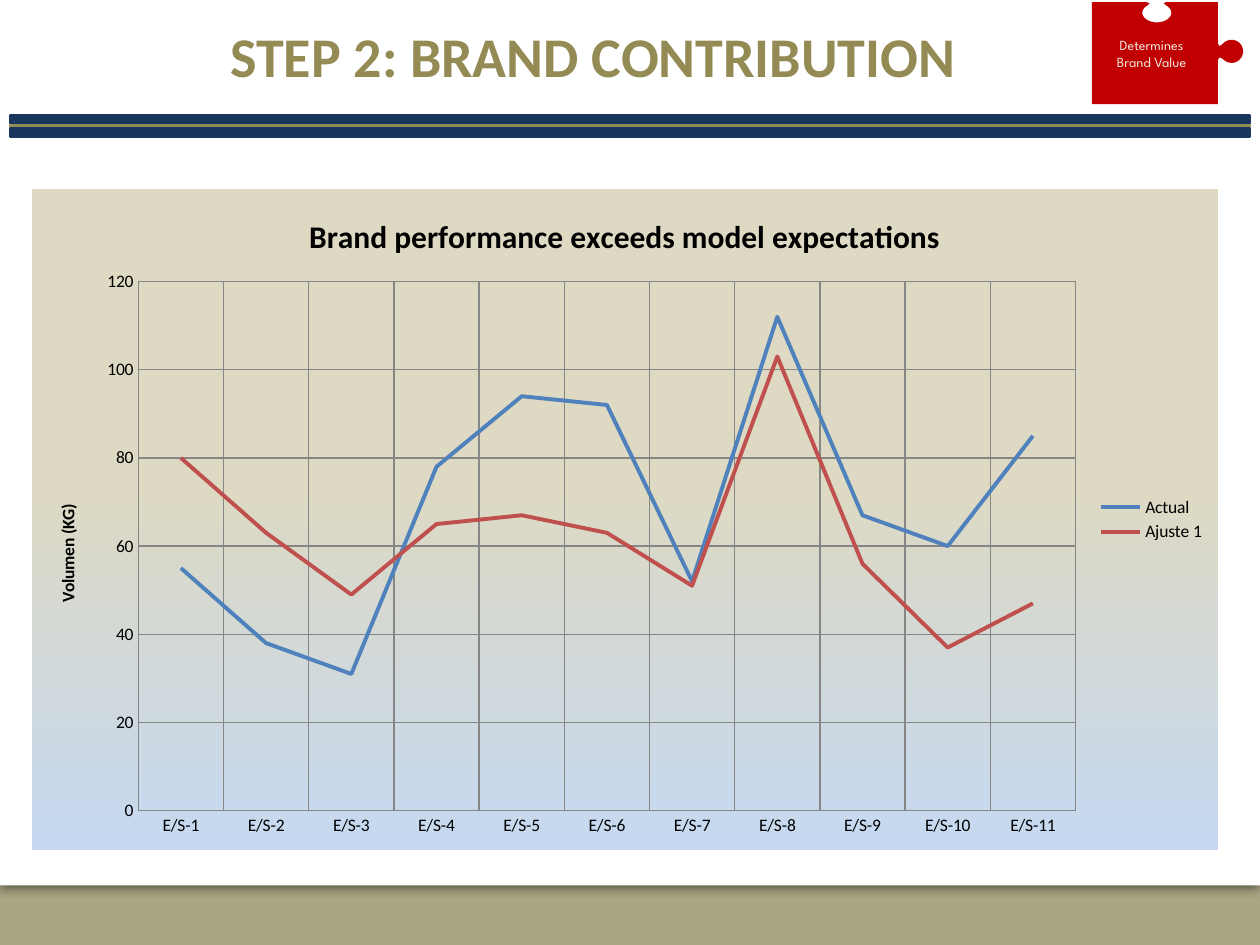
from dataclasses import dataclass
from math import cos, radians, sin

from lxml.etree import fromstring
from pptx import Presentation
from pptx.chart.data import CategoryChartData
from pptx.dml.color import RGBColor
from pptx.enum.chart import XL_CHART_TYPE, XL_LEGEND_POSITION, XL_TICK_MARK
from pptx.enum.shapes import MSO_SHAPE
from pptx.enum.text import MSO_ANCHOR, MSO_AUTO_SIZE, PP_ALIGN
from pptx.oxml.ns import nsdecls
from pptx.util import Pt


@dataclass(frozen=True)
class Theme:
    """Colours, fonts and type sizes of the slide."""
    backdrop: str = "A9A684"
    paper: str = "FFFFFF"
    navy: str = "17375E"
    olive: str = "948A54"
    red: str = "C00000"
    cream: str = "EEECE1"
    ink: str = "000000"
    grid: str = "868686"
    chart_top: str = "DDD9C3"
    chart_bottom: str = "C6D9F1"
    series: tuple = ("4F81BD", "C0504D")
    font: str = "Calibri"
    badge_font: str = "League Spartan"
    title_size: int = 32
    chart_title_size: int = 18
    chart_size: int = 10
    badge_size: int = 8


THEME = Theme()
STATIONS = [f"E/S-{number}" for number in range(1, 12)]
VOLUMES = {
    "Actual": (55, 38, 31, 78, 94, 92, 52, 112, 67, 60, 85),
    "Ajuste 1": (80, 63, 49, 65, 67, 63, 51, 103, 56, 37, 47),
}


def rgb(code):
    """Turn a hex code into a colour."""
    return RGBColor.from_string(code)


def style_font(font, size, color, bold=False, name=THEME.font):
    """Set the face, size, colour and weight of a font."""
    font.name, font.size, font.bold = name, Pt(size), bold
    font.color.rgb = rgb(color)


def add_bar(slide, left, top, width, height, color):
    """Add a plain filled rectangle below the title."""
    bar = slide.shapes.add_shape(
        MSO_SHAPE.RECTANGLE, Pt(left), Pt(top), Pt(width), Pt(height))
    bar.shadow.inherit = False
    bar.fill.solid()
    bar.fill.fore_color.rgb = rgb(color)
    bar.line.fill.background()
    slide.shapes.title._element.addprevious(bar._element)
    return bar


def add_paper(slide, left, top, width, height):
    """Add the white sheet that casts a shadow on the backdrop."""
    paper = add_bar(slide, left, top, width, height, THEME.paper)
    effects = paper._element.spPr.find(
        "{http://schemas.openxmlformats.org/drawingml/2006/main}effectLst")
    effects.append(fromstring(
        f'<a:outerShdw {nsdecls("a")} blurRad="{Pt(5)}" dist="{Pt(2)}" dir="5400000">'
        f'<a:srgbClr val="{THEME.ink}"><a:alpha val="43000"/></a:srgbClr></a:outerShdw>'))


def add_rule(slide, left, top, width):
    """Add the navy and olive rule under the heading."""
    layers = ((0, 4.3, THEME.navy), (5.8, 2.9, THEME.olive), (7.2, 4.3, THEME.navy))
    for offset, height, color in layers:
        band = add_bar(slide, left, top + offset, width, height, color)
        band.line.color.rgb = rgb(color)
        band.line.width = Pt(2)


def place_title(slide, left, top, width, height):
    """Place and format the slide title."""
    title = slide.shapes.title
    title.left, title.top, title.width, title.height = map(Pt, (left, top, width, height))
    frame = title.text_frame
    frame.text = "STEP 2: BRAND CONTRIBUTION"
    frame.word_wrap, frame.auto_size = True, MSO_AUTO_SIZE.NONE
    frame.vertical_anchor = MSO_ANCHOR.MIDDLE
    heading = frame.paragraphs[0]
    heading.alignment = PP_ALIGN.CENTER
    style_font(heading.font, THEME.title_size, THEME.olive, bold=True)


def style_axis(axis, tick):
    """Give an axis its grid, line and tick marks."""
    axis.has_major_gridlines = True
    for line in (axis.major_gridlines.format.line, axis.format.line):
        line.color.rgb = rgb(THEME.grid)
        line.width = Pt(0.75)
    axis.major_tick_mark, axis.minor_tick_mark = tick, XL_TICK_MARK.NONE


def set_caption(owner, text, size):
    """Write a bold chart or axis title."""
    owner.text_frame.text = text
    style_font(owner.text_frame.paragraphs[0].font, size, THEME.ink, bold=True)


def add_volume_chart(slide, left, top, width, height):
    """Add the line chart of actual and modelled volume."""
    data = CategoryChartData()
    data.categories = STATIONS
    for name, values in VOLUMES.items():
        data.add_series(name, values)
    chart = slide.shapes.add_chart(
        XL_CHART_TYPE.LINE, Pt(left), Pt(top), Pt(width), Pt(height), data).chart
    style_font(chart.font, THEME.chart_size, THEME.ink)
    chart.has_title = True
    set_caption(chart.chart_title, "Brand performance exceeds model expectations",
                THEME.chart_title_size)
    chart.chart_title.include_in_layout = False
    chart.has_legend = True
    chart.legend.position = XL_LEGEND_POSITION.RIGHT
    chart.legend.include_in_layout = False

    style_axis(chart.category_axis, XL_TICK_MARK.NONE)
    style_axis(chart.value_axis, XL_TICK_MARK.INSIDE)
    volume = chart.value_axis
    volume.minimum_scale, volume.maximum_scale, volume.major_unit = 0, 120, 20
    set_caption(volume.axis_title, "Volumen (KG)", THEME.chart_size)

    chart.plots[0].vary_by_categories = False
    for series, color in zip(chart.plots[0].series, THEME.series):
        series.smooth = False
        series.format.line.color.rgb = rgb(color)
        series.format.line.width = Pt(2.25)

    plot_area = chart._chartSpace.chart.plotArea
    for layout in plot_area.findall("{*}layout"):
        plot_area.remove(layout)
    plot_box = "".join(f'<c:{key} val="{value}"/>' for key, value in (
        ("layoutTarget", "inner"), ("xMode", "edge"), ("yMode", "edge"),
        ("x", 0.09), ("y", 0.14), ("w", 0.79), ("h", 0.8)))
    plot_area.insert(0, fromstring(
        f'<c:layout {nsdecls("c")}><c:manualLayout>{plot_box}</c:manualLayout></c:layout>'))
    stops = "".join(
        f'<a:gs pos="{place}"><a:srgbClr val="{color}"/></a:gs>' for place, color in (
            (0, THEME.chart_top), (45000, THEME.chart_top), (100000, THEME.chart_bottom)))
    chart._chartSpace.chart.addnext(fromstring(
        f'<c:spPr {nsdecls("c", "a")}><a:gradFill><a:gsLst>{stops}</a:gsLst>'
        '<a:lin ang="5400000" scaled="0"/></a:gradFill><a:ln><a:noFill/></a:ln></c:spPr>'))


def arc(center_x, center_y, radius_x, radius_y, start, end, steps=28):
    """List points along an ellipse, with angles in degrees."""
    angles = [radians(start + (end - start) * step / steps) for step in range(steps + 1)]
    return [(center_x + radius_x * cos(angle), center_y + radius_y * sin(angle))
            for angle in angles]


def add_puzzle_badge(slide, left, top, width, height):
    """Add the puzzle piece with a notch above and a knob on the right."""
    body = width - 14.4
    knob = arc(body + 7.8, height / 2 - 1, 6.6, 6.6, 140, -140)
    notch = arc(37.1, 6.1, 8.3, 5.5, -50, 230)
    outline = [
        (0, 0), (0, height), (body, height), (body, 33), (body + 0.8, 31.6), *knob,
        (body + 0.8, 25.2), (body, 23.6), (body, 0), (42.5, 0), (41, 0.7), *notch,
        (33, 0.7), (31, 0)]
    points = [(Pt(left + x), Pt(top + y)) for x, y in outline]
    builder = slide.shapes.build_freeform(*points[0])
    builder.add_line_segments(points[1:], close=True)
    badge = builder.convert_to_shape()
    badge.shadow.inherit = False
    badge.fill.solid()
    badge.fill.fore_color.rgb = rgb(THEME.red)
    badge.line.fill.background()
    frame = badge.text_frame
    frame.text = "Determines\nBrand Value"
    frame.word_wrap, frame.vertical_anchor = True, MSO_ANCHOR.MIDDLE
    frame.margin_left, frame.margin_right = Pt(7.2), Pt(25.2)
    frame.margin_top = frame.margin_bottom = Pt(3.6)
    for line in frame.paragraphs:
        line.alignment = PP_ALIGN.CENTER
        style_font(line.font, THEME.badge_size, THEME.cream, name=THEME.badge_font)


def main():
    """Build and save the slide."""
    deck = Presentation()
    deck.slide_width, deck.slide_height = Pt(720), Pt(540)
    slide = deck.slides.add_slide(deck.slide_layouts.get_by_name("Title Only"))
    slide.background.fill.solid()
    slide.background.fill.fore_color.rgb = rgb(THEME.backdrop)
    add_paper(slide, 0, 0, 720, 506)
    add_rule(slide, 6, 66.2, 708)
    place_title(slide, 54, 3.6, 570, 56.2)
    add_volume_chart(slide, 18, 108, 678, 378)
    add_puzzle_badge(slide, 624, 1.2, 86.4, 58.3)
    deck.save("out.pptx")


if __name__ == "__main__":
    main()
